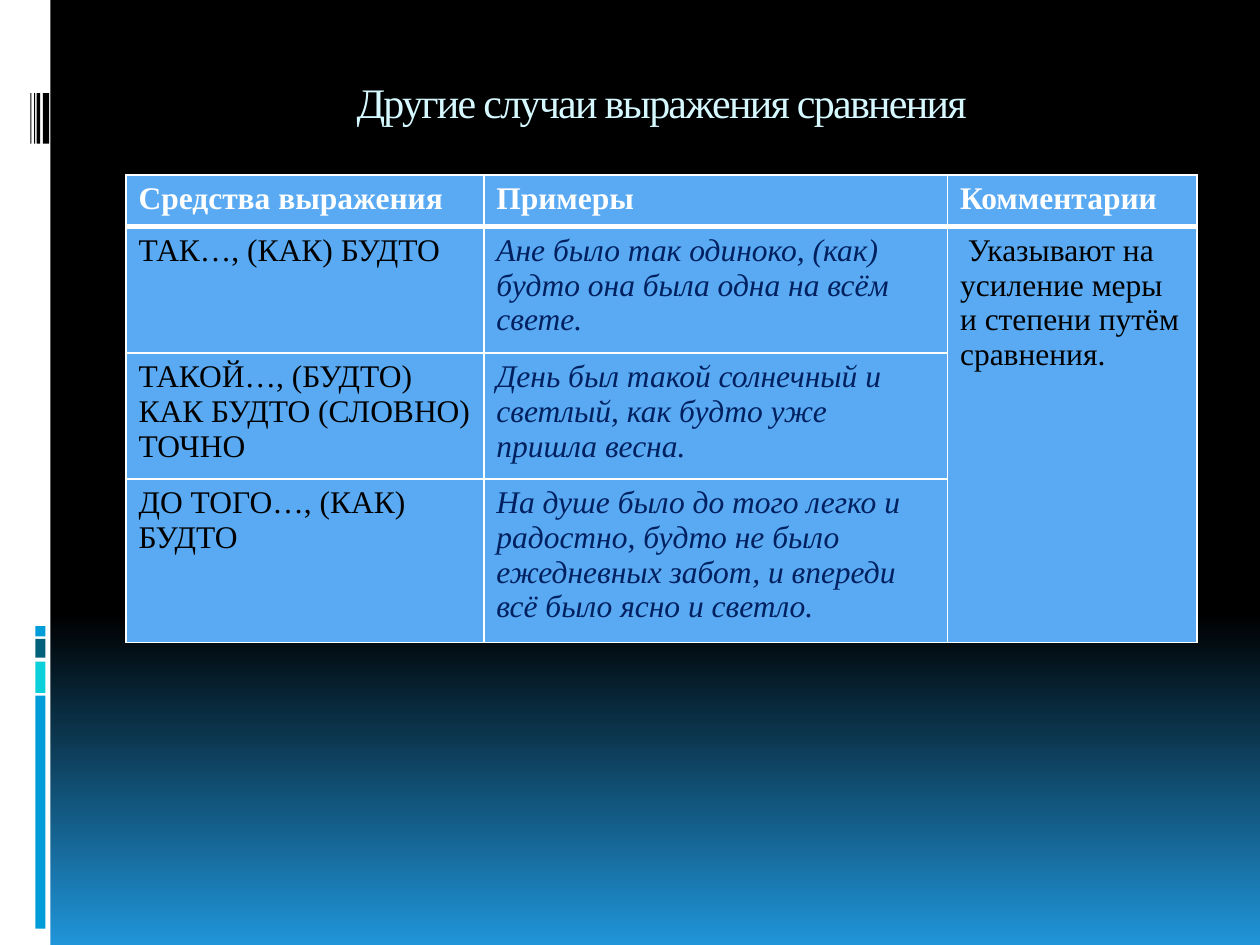
from copy import deepcopy

from lxml import etree
from pptx import Presentation
from pptx.dml.color import RGBColor
from pptx.enum import shapes, text
from pptx.oxml.ns import qn
from pptx.util import Inches, Pt

WHITE = RGBColor(0xFF, 0xFF, 0xFF)
BLACK = RGBColor(0, 0, 0)
BLUE = RGBColor(0x20, 0x95, 0xD9)
SKY = RGBColor(0x00, 0x9D, 0xD9)
CYAN = RGBColor(0x0B, 0xD0, 0xD9)
TEAL = RGBColor(0x04, 0x61, 0x7B)
ICE = RGBColor(0xD5, 0xF9, 0xFF)
CELL = RGBColor(0x59, 0xAA, 0xF2)
NAVY = RGBColor(0x00, 0x20, 0x60)


class Deck:
    """Holds the style and the current slide."""

    font = "Times New Roman"

    def __init__(self, wide, high):
        """Open a deck with one blank slide."""
        self.prs = Presentation()
        self.prs.slide_width, self.prs.slide_height = Inches(wide), Inches(high)
        self.slide = self.prs.slides.add_slide(self.prs.slide_layouts[6])

    def back(self, top, low, start):
        """Fill the background: plain down to start, then fading to low."""
        fill = self.slide.background.fill
        fill.gradient()
        fill.gradient_angle = 270
        for stop, color, pos in zip(fill.gradient_stops, (top, low), (start, 1)):
            stop.color.rgb, stop.position = color, pos
        first = self.slide._element.find(".//" + qn("a:gs"))
        lead = deepcopy(first)
        lead.set("pos", "0")
        first.addprevious(lead)

    def bar(self, x, y, w, h, color):
        """Draw a plain rectangle."""
        box = self.slide.shapes.add_shape(
            shapes.MSO_SHAPE.RECTANGLE, *map(Inches, (x, y, w, h)))
        box.shadow.inherit = False
        box.fill.solid()
        box.fill.fore_color.rgb = color
        box.line.fill.background()

    def run(self, para, words, size, color, bold=False, slant=False):
        """Add one styled run and return it."""
        run = para.add_run()
        run.text = words
        font = run.font
        font.name, font.size, font.bold, font.italic = self.font, Pt(size), bold, slant
        font.color.rgb = color
        return run

    def title(self, x, y, w, h, words):
        """Add the centred title with tight letter spacing."""
        box = self.slide.shapes.add_textbox(*map(Inches, (x, y, w, h)))
        frame = box.text_frame
        frame.word_wrap = True
        frame.margin_top = 0
        frame.margin_bottom = Inches(0.1)
        frame.vertical_anchor = text.MSO_ANCHOR.MIDDLE
        para = frame.paragraphs[0]
        para.alignment = text.PP_ALIGN.CENTER
        run = self.run(para, words, 24, ICE)
        run.font._element.set("spc", "-100")

    def edge(self, cell, side, width):
        """Draw one white border of a cell."""
        line = etree.SubElement(cell._tc.get_or_add_tcPr(), qn("a:ln" + side),
                                w=str(Pt(width)))
        fill = etree.SubElement(line, qn("a:solidFill"))
        etree.SubElement(fill, qn("a:srgbClr"), val=str(WHITE))

    def table(self, x, y, cols, high, rows):
        """Add the table; rows grow with their text, the last column is merged."""
        count = len(rows)
        grid = self.slide.shapes.add_table(
            count, len(cols),
            *map(Inches, (x, y, sum(cols), high * count))).table
        for col, wide in zip(grid.columns, cols):
            col.width = Inches(wide)
        for r, row in enumerate(grid.rows):
            row.height = Inches(high)
            for cell in row.cells:
                for side in "LRTB":
                    self.edge(cell, side, 3 if (r, side) == (0, "B") else 1)
                cell.fill.solid()
                cell.fill.fore_color.rgb = CELL
        last = len(cols) - 1
        grid.cell(1, last).merge(grid.cell(count - 1, last))
        for r, row in enumerate(rows):
            for c, words in enumerate(row):
                frame = grid.cell(r, c).text_frame
                slant = r > 0 and c == 1
                color = WHITE if r == 0 else NAVY if slant else BLACK
                for n, line in enumerate(words.split("\n")):
                    para = frame.add_paragraph() if n else frame.paragraphs[0]
                    self.run(para, line, 18, color, r == 0, slant)


ROWS = [
    ("Средства выражения", "Примеры", "Комментарии"),
    ("ТАК…, (КАК) БУДТО",
     "Ане было так одиноко, (как) будто она была одна на всём свете.",
     " Указывают на усиление меры и степени путём сравнения."),
    ("ТАКОЙ…, (БУДТО)\nКАК БУДТО (СЛОВНО)\nТОЧНО",
     "День был такой солнечный и светлый, как будто уже пришла весна."),
    ("ДО ТОГО…, (КАК)\nБУДТО",
     "На душе было до того легко и радостно, будто не было ежедневных забот, "
     "и впереди всё было ясно и светло."),
]

deck = Deck(10, 7.5)
deck.back(BLACK, BLUE, 0.65)
deck.bar(0, 0, 0.4, 7.5, WHITE)
for y, h, color in ((5.52, 1.85, SKY), (5.25, 0.25, CYAN),
                    (5.07, 0.15, TEAL), (4.97, 0.08, SKY)):
    deck.bar(0.28, y, 0.08, h, color)
for x, w in ((0.34, 0.05), (0.29, 0.03), (0.27, 0.01), (0.24, 0.01)):
    deck.bar(x, 0.74, w, 0.4, BLACK)
deck.title(1, 0.56, 8.5, 0.59, "Другие случаи выражения сравнения")
deck.table(1, 1.39, (2.84, 3.68, 1.98), 0.41, ROWS)
deck.prs.save("out.pptx")
